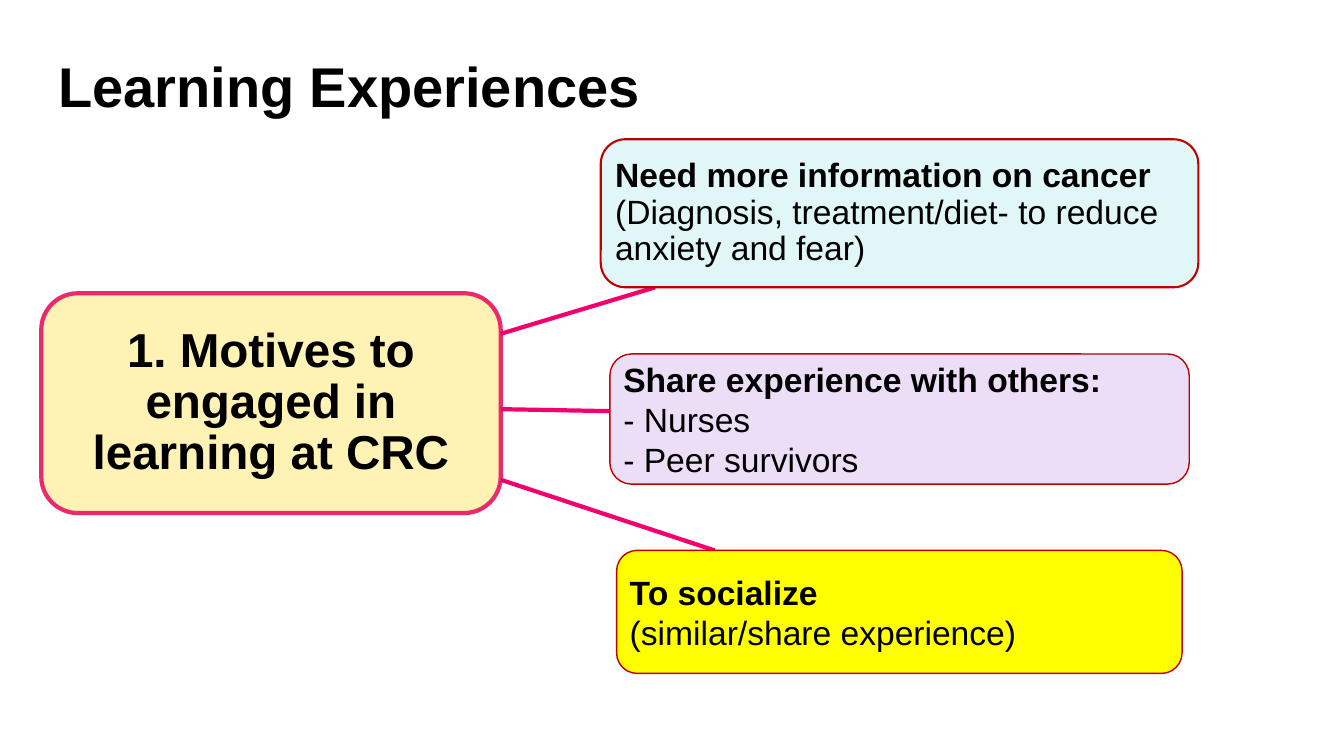
from dataclasses import dataclass

from lxml import etree
from pptx import Presentation
from pptx import util as u
from pptx.dml.color import RGBColor
from pptx.enum import shapes, text
from pptx.oxml.ns import qn

BLACK = RGBColor(0x00, 0x00, 0x00)
CREAM = RGBColor(0xFE, 0xF2, 0xB4)
ROSE = RGBColor(0xED, 0x29, 0x6D)
PINK = RGBColor(0xF4, 0x00, 0x6D)
RED = RGBColor(0xC0, 0x00, 0x00)
AQUA = RGBColor(0xE1, 0xF7, 0xF7)
LILAC = RGBColor(0xEC, 0xDE, 0xF6)
YELLOW = RGBColor(0xFF, 0xFF, 0x00)

FONT = "Arial"


@dataclass
class Box:
    """Rounded box in cm; each paragraph is a tuple of runs, the first run is bold."""
    left: float
    top: float
    width: float
    height: float
    fill: RGBColor
    edge: RGBColor
    weight: float
    paras: tuple[tuple[str, ...], ...]
    size: int = 24
    pad: float = 0.18
    gap: float = 1.0
    align: text.PP_ALIGN = text.PP_ALIGN.LEFT


@dataclass
class Link:
    """Line in cm from the right edge of the theme box."""
    start: float
    x: float
    y: float


THEME = Box(1.04, 7.39, 11.58, 5.54, CREAM, ROSE, 3,
            (("1. Motives to engaged in learning at CRC",),),
            size=34, pad=0.23, gap=0.9, align=text.PP_ALIGN.CENTER)

MOTIVES = [
    Box(15.14, 3.51, 15.06, 3.73, AQUA, RED, 1.5,
        (("Need more information on cancer ",
          "(Diagnosis, treatment/diet- to reduce anxiety and fear)"),), gap=0.9),
    Box(15.37, 8.92, 14.6, 3.28, LILAC, RED, 1,
        (("Share experience with others:",), ("- Nurses",), ("- Peer survivors",))),
    Box(15.54, 13.87, 14.25, 3.1, YELLOW, RED, 1,
        (("To socialize",), ("(similar/share experience)",))),
]

LINKS = [Link(8.41, 16.51, 7.24), Link(10.31, 15.37, 10.36), Link(12.09, 18.01, 13.87)]


def style(run, size: int, bold: bool) -> None:
    run.font.name = FONT
    run.font.size = u.Pt(size)
    run.font.bold = bold
    run.font.color.rgb = BLACK


def write(frame, box: Box) -> None:
    frame.word_wrap = True
    frame.vertical_anchor = text.MSO_ANCHOR.MIDDLE
    frame.margin_left = frame.margin_right = u.Cm(box.pad)
    frame.margin_top = frame.margin_bottom = u.Cm(box.pad)
    frame.text = "\n".join(runs[0] for runs in box.paras)
    for row, (para, runs) in enumerate(zip(frame.paragraphs, box.paras)):
        para.alignment = box.align
        para.line_spacing = box.gap
        for more in runs[1:]:
            para.add_run().text = more
        for col, run in enumerate(para.runs):
            style(run, box.size, bold=row == col == 0)


def draw_box(slide, box: Box) -> None:
    shape = slide.shapes.add_shape(
        shapes.MSO_SHAPE.ROUNDED_RECTANGLE,
        u.Cm(box.left), u.Cm(box.top), u.Cm(box.width), u.Cm(box.height))
    shape.shadow.inherit = False
    shape.fill.solid()
    shape.fill.fore_color.rgb = box.fill
    shape.line.color.rgb = box.edge
    shape.line.width = u.Pt(box.weight)
    write(shape.text_frame, box)


def draw_link(slide, link: Link) -> None:
    line = slide.shapes.add_connector(
        shapes.MSO_CONNECTOR.STRAIGHT,
        u.Cm(THEME.left + THEME.width), u.Cm(link.start), u.Cm(link.x), u.Cm(link.y))
    line.line.color.rgb = PINK
    line.line.width = u.Pt(3)
    etree.SubElement(line._element.spPr, qn("a:effectLst"))


def draw_title(slide) -> None:
    title = slide.shapes.add_textbox(u.Cm(1.22), u.Cm(1.37), u.Cm(15.62), u.Cm(3.35))
    title.text_frame.word_wrap = True
    title.text_frame.text = "Learning Experiences"
    para = title.text_frame.paragraphs[0]
    para.line_spacing = 0.9
    style(para.runs[0], 40, bold=True)


def main() -> None:
    deck = Presentation()
    deck.slide_width, deck.slide_height = u.Cm(33.87), u.Cm(19.05)
    slide = deck.slides.add_slide(deck.slide_layouts[6])

    draw_title(slide)

    # Theme on the left, motives on the right
    draw_box(slide, THEME)
    for link in LINKS:
        draw_link(slide, link)
    for box in MOTIVES:
        draw_box(slide, box)

    deck.save("out.pptx")


if __name__ == "__main__":
    main()
